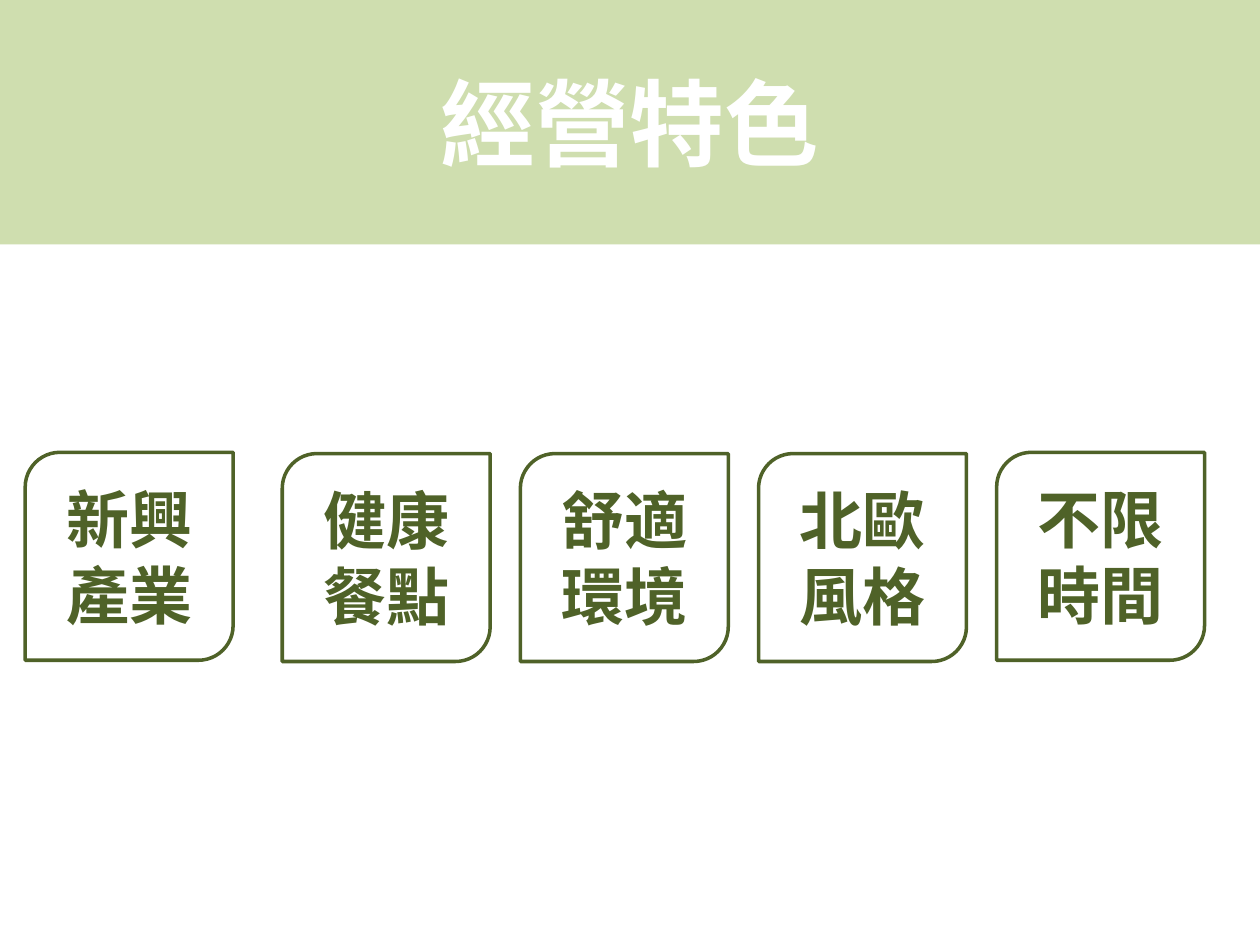
from lxml.etree import SubElement
from pptx import Presentation
from pptx.dml.color import RGBColor
from pptx.enum.shapes import MSO_SHAPE
from pptx.enum.text import MSO_ANCHOR, PP_ALIGN
from pptx.oxml.ns import qn
from pptx.util import Inches, Pt

FONT = "Noto Sans CJK SC"
COLORS = {"band": "C3D69B", "leaf": "4F6228", "white": "FFFFFF"}
SIDE = 1.65
CARDS = [
    ("新興產業", 0.2, 3.59),
    ("健康餐點", 2.24, 3.6),
    ("舒適環境", 4.13, 3.6),
    ("北歐風格", 6.02, 3.6),
    ("不限時間", 7.91, 3.59),
]


def color(name):
    """Return the named colour."""
    return RGBColor.from_string(COLORS[name])


def panel(slide, kind, box, fill, alpha):
    """Add a shape with a translucent fill and no line or shadow."""
    shape = slide.shapes.add_shape(kind, *map(Inches, box))
    shape.shadow.inherit = False
    shape.fill.solid()
    shape.fill.fore_color.rgb = color(fill)
    tint = shape.fill._xPr.find(qn("a:solidFill"))[0]
    SubElement(tint, qn("a:alpha")).set("val", str(alpha * 1000))
    shape.line.fill.background()
    return shape


def write(shape, text, size, ink):
    """Write bold centred text in a shape."""
    frame = shape.text_frame
    frame.word_wrap = True
    frame.vertical_anchor = MSO_ANCHOR.MIDDLE
    para = frame.paragraphs[0]
    para.alignment = PP_ALIGN.CENTER
    run = para.add_run()
    run.text = text
    run.font.name = FONT
    run.font.size = Pt(size)
    run.font.bold = True
    run.font.color.rgb = color(ink)


def header(slide, box, text):
    """Draw the title band."""
    band = panel(slide, MSO_SHAPE.RECTANGLE, box, "band", 80)
    write(band, text, 54, "white")


def card(slide, box, text):
    """Draw one leaf-shaped feature card."""
    leaf = panel(slide, MSO_SHAPE.ROUND_2_DIAG_RECTANGLE, box, "white", 90)
    leaf.line.color.rgb = color("leaf")
    leaf.line.width = Pt(2)
    write(leaf, text, 36, "leaf")


def main():
    """Build and save the slide."""
    deck = Presentation()
    deck.slide_width = Inches(10)
    deck.slide_height = Inches(7.5)
    slide = deck.slides.add_slide(deck.slide_layouts[6])
    header(slide, (0, 0, 10, 1.94), "經營特色")
    for text, left, top in CARDS:
        card(slide, (left, top, SIDE, SIDE), text)
    deck.save("out.pptx")


if __name__ == "__main__":
    main()
